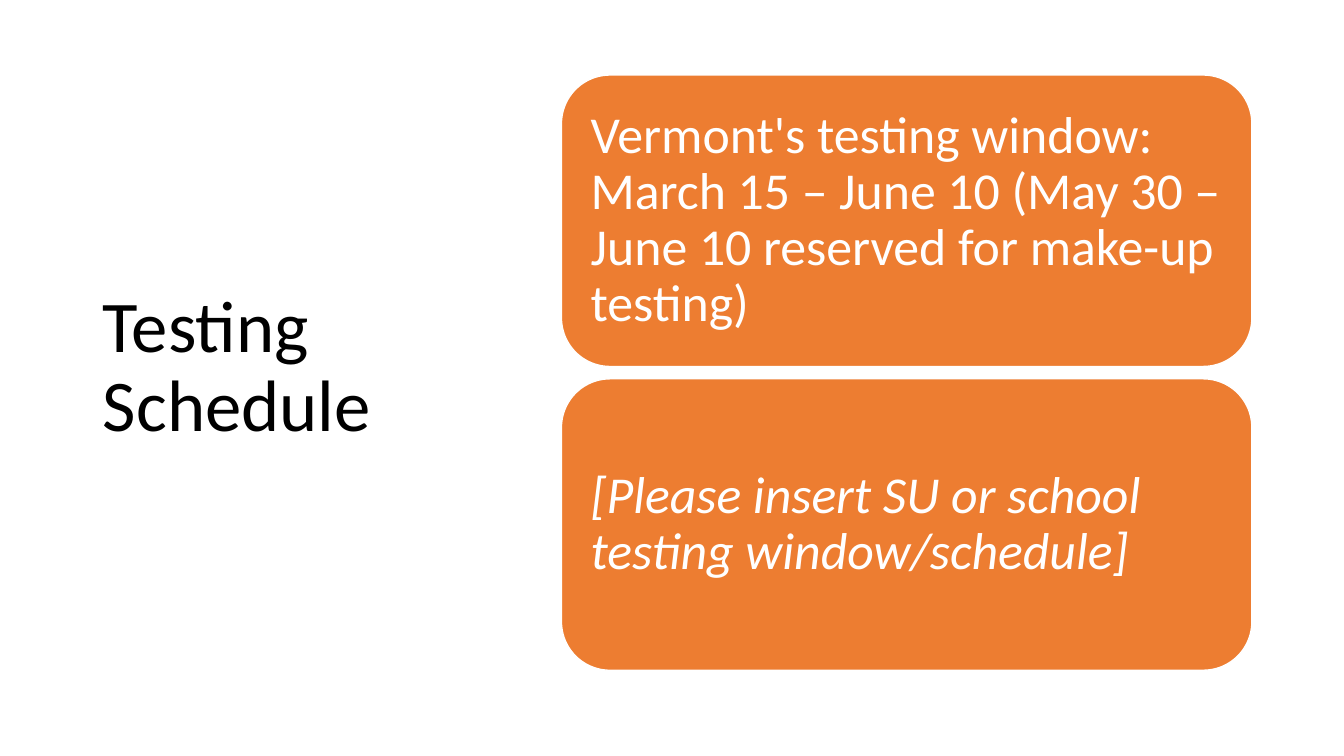
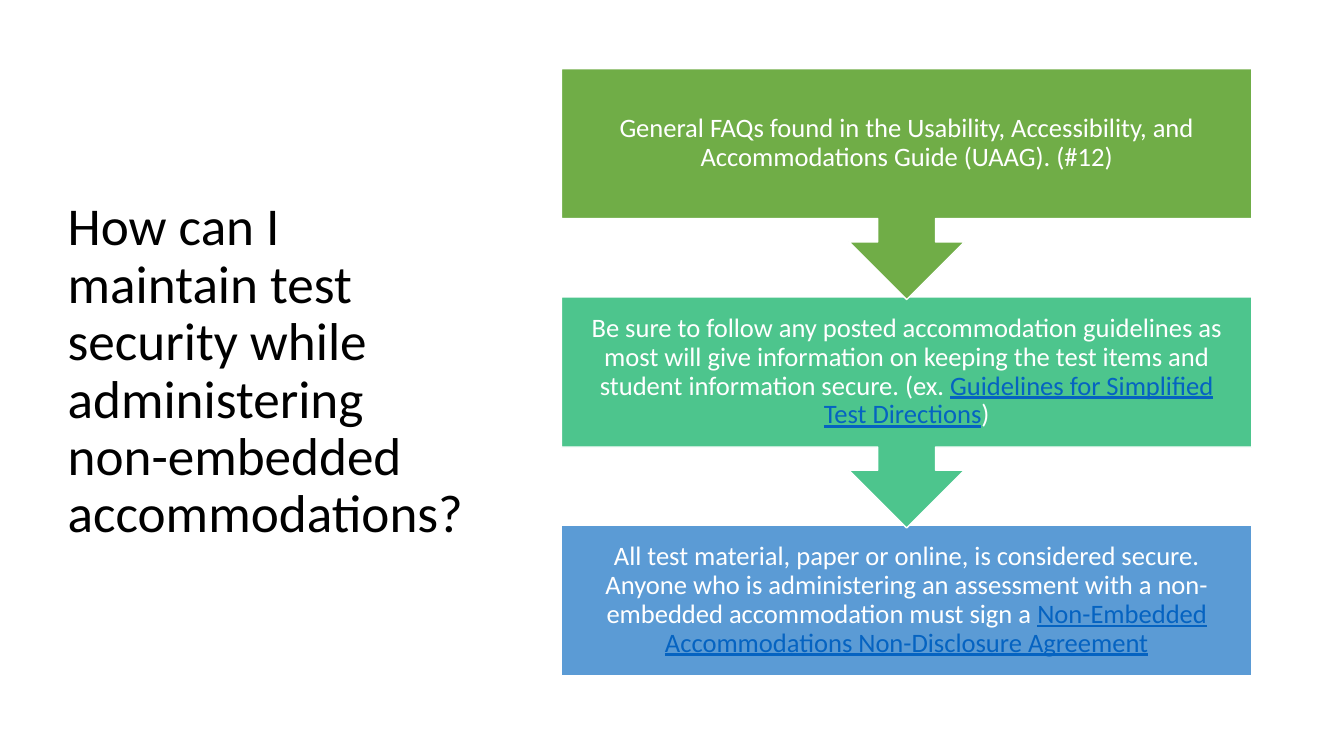
from dataclasses import dataclass

from pptx import Presentation
from pptx.dml.color import RGBColor
from pptx.enum.shapes import MSO_SHAPE as Shape
from pptx.enum.text import MSO_ANCHOR as Anchor, MSO_AUTO_SIZE as AutoSize, PP_ALIGN as Align
from pptx.util import Cm, Pt


@dataclass(frozen=True)
class Theme:
    font: str = "Calibri"
    black: str = "000000"
    white: str = "FFFFFF"
    orange: str = "ED7D31"
    green: str = "70AD47"
    teal: str = "4DC58D"
    blue: str = "5B9BD5"
    link: str = "0563C1"
    short_title_size: int = 52
    long_title_size: int = 38
    card_size: int = 37
    step_size: int = 19
    line_spacing: float = 0.9
    inset: float = 0.38


@dataclass(frozen=True)
class Box:
    left: float
    top: float
    width: float
    height: float

    def lengths(self):
        return [Cm(value) for value in (self.left, self.top, self.width, self.height)]


@dataclass(frozen=True)
class Run:
    text: str
    linked: bool = False


THEME = Theme()
TITLE_ONLY = 5
CARD_GAP = 0.31
STEP_HEIGHT = 3.78
CALLOUT_HEIGHT = 5.82

CARDS = [
    ("Vermont's testing window: March 15 – June 10 "
     "(May 30 – June 10 reserved for make-up testing)", False),
    ("[Please insert SU or school testing window/schedule]", True),
]

STEPS = [
    (THEME.green, [
        Run("General FAQs found in the Usability, Accessibility, and "
            "Accommodations Guide (UAAG). (#12)"),
    ]),
    (THEME.teal, [
        Run("Be sure to follow any posted accommodation guidelines as most will give "
            "information on keeping the test items and student information secure. (ex. "),
        Run("Guidelines for Simplified Test Directions", linked=True),
        Run(")"),
    ]),
    (THEME.blue, [
        Run("All test material, paper or online, is considered secure. Anyone who is "
            "administering an assessment with a non-embedded accommodation must sign a "),
        Run("Non-Embedded Accommodations Non-Disclosure Agreement", linked=True),
    ]),
]


def rgb(color):
    return RGBColor.from_string(color)


def format_paragraph(paragraph, size, color, alignment=Align.LEFT):
    paragraph.alignment = alignment
    paragraph.line_spacing = THEME.line_spacing
    paragraph.font.name = THEME.font
    paragraph.font.size = Pt(size)
    paragraph.font.color.rgb = rgb(color)


def add_titled_slide(presentation, text, box, size):
    slide = presentation.slides.add_slide(presentation.slide_layouts[TITLE_ONLY])
    title = slide.shapes.title
    title.left, title.top, title.width, title.height = box.lengths()
    frame = title.text_frame
    frame.text = text
    frame.word_wrap = True
    frame.auto_size = AutoSize.NONE
    frame.vertical_anchor = Anchor.MIDDLE
    format_paragraph(frame.paragraphs[0], size, THEME.black)
    return slide


def add_block(slide, kind, box, color, runs, size, alignment):
    shape = slide.shapes.add_shape(kind, *box.lengths())
    shape.shadow.inherit = False
    shape.fill.solid()
    shape.fill.fore_color.rgb = rgb(color)
    shape.line.color.rgb = rgb(THEME.white)
    shape.line.width = Pt(1)
    frame = shape.text_frame
    frame.word_wrap = True
    frame.vertical_anchor = Anchor.MIDDLE
    frame.margin_left = frame.margin_right = Cm(THEME.inset)
    frame.margin_top = frame.margin_bottom = Cm(THEME.inset)
    paragraph = frame.paragraphs[0]
    format_paragraph(paragraph, size, THEME.white, alignment)
    for part in runs:
        run = paragraph.add_run()
        run.text = part.text
        if part.linked:
            run.font.color.rgb = rgb(THEME.link)
            run.font.underline = True
    return paragraph


def add_cards(slide, box, cards):
    height = (box.height - CARD_GAP * (len(cards) - 1)) / len(cards)
    for index, (text, italic) in enumerate(cards):
        card = Box(box.left, box.top + index * (height + CARD_GAP), box.width, height)
        paragraph = add_block(slide, Shape.ROUNDED_RECTANGLE, card, THEME.orange,
                              [Run(text)], THEME.card_size, Align.LEFT)
        paragraph.font.italic = italic


def add_steps(slide, box, steps):
    last = len(steps) - 1
    pitch = (box.height - STEP_HEIGHT) / last
    for index, (color, runs) in reversed(list(enumerate(steps))):
        if index == last:
            kind, height = Shape.RECTANGLE, STEP_HEIGHT
        else:
            kind, height = Shape.DOWN_ARROW_CALLOUT, CALLOUT_HEIGHT
        step = Box(box.left, box.top + index * pitch, box.width, height)
        add_block(slide, kind, step, color, runs, THEME.step_size, Align.CENTER)


def main():
    presentation = Presentation()
    presentation.slide_width = Cm(33.87)
    presentation.slide_height = Cm(19.05)

    schedule = add_titled_slide(presentation, "Testing Schedule",
                                Box(2.34, 1.55, 9.37, 15.47), THEME.short_title_size)
    add_cards(schedule, Box(14.15, 1.89, 17.4, 15), CARDS)

    security = add_titled_slide(
        presentation,
        "How can I maintain test security while administering non-embedded accommodations?",
        Box(1.45, 1.73, 10.57, 15.29), THEME.long_title_size)
    add_steps(security, Box(14.15, 1.73, 17.4, 15.29), STEPS)

    presentation.save("out.pptx")


if __name__ == "__main__":
    main()
